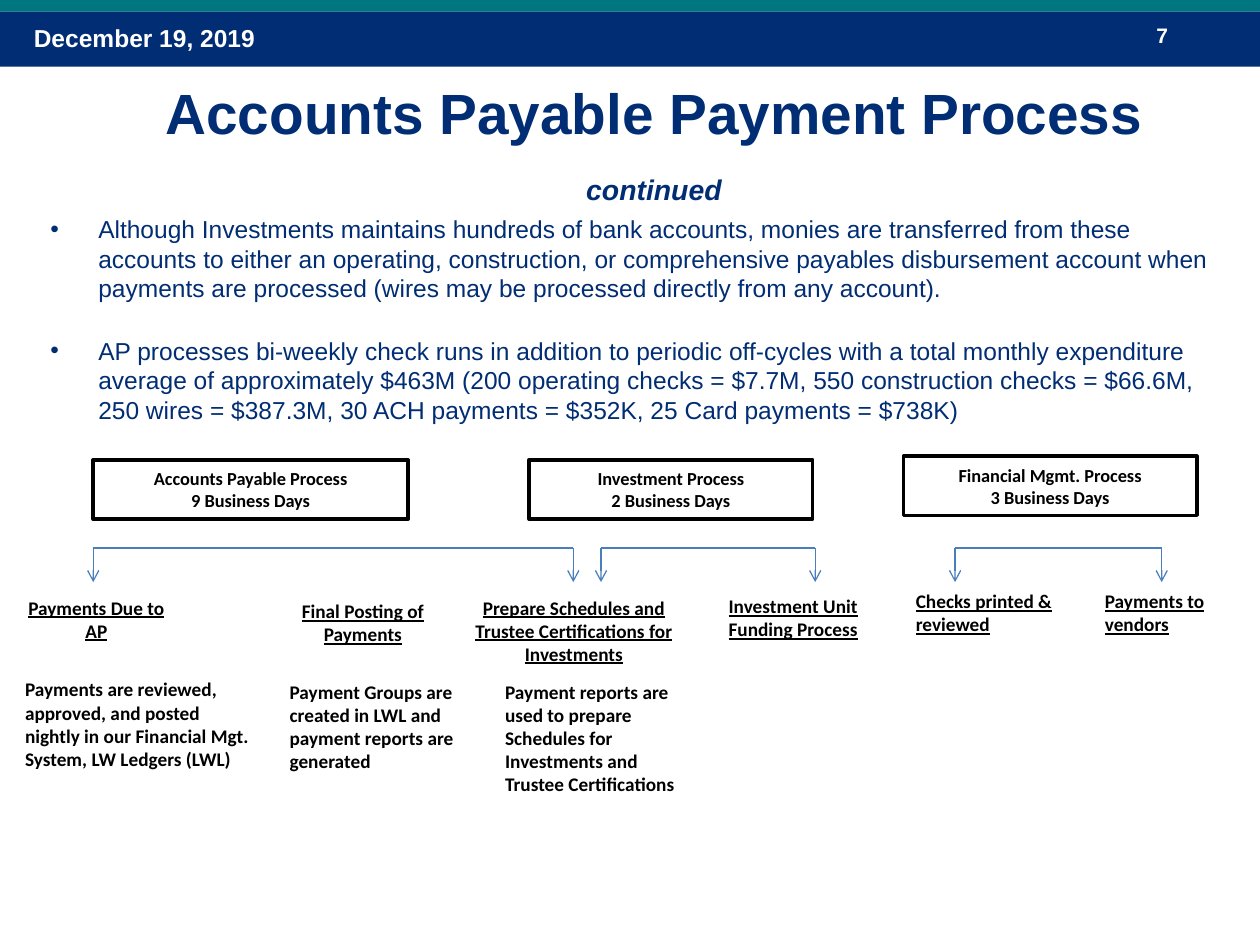
from lxml import etree
from pptx import Presentation, util as u
from pptx.dml.color import RGBColor
from pptx.enum import shapes, text
from pptx.oxml.ns import qn

COLS, ROWS = 100, 75
WIDE, HIGH = u.Inches(10), u.Inches(7.5)
NAVY, TEAL, BLUE = "002D73", "007681", "4B7EBC"
WHITE, BLACK = "FFFFFF", "000000"
MID, LEFT = text.PP_ALIGN.CENTER, text.PP_ALIGN.LEFT

BOXES = [
    (7.4, 36.5, 25, "Accounts Payable Process", "9 Business Days"),
    (42, 36.5, 22.5, "Investment Process", "2 Business Days"),
    (71.7, 36.2, 23.3, "Financial Mgmt. Process", "3 Business Days"),
]
SPANS = [(7.4, 45.5), (47.7, 64.7), (75.8, 92.2)]
STEPS = [
    (1, 46.8, 13.3, 4.7, MID, "Payments Due to AP"),
    (21.7, 47.1, 14.2, 4.7, MID, "Final Posting of Payments"),
    (35.6, 46.8, 19.9, 6.6, MID,
     "Prepare Schedules and Trustee Certifications for Investments"),
    (54.2, 46.7, 17.5, 4.7, MID, "Investment Unit Funding Process"),
    (71.7, 46.3, 15.6, 4.7, LEFT, "Checks printed & reviewed"),
    (86.7, 46.3, 10.8, 4.7, LEFT, "Payments to vendors"),
]
NOTES = [
    (1, 53.3, 19.9, 8.4, "Payments are reviewed, approved, and posted nightly "
     "in our Financial Mgt. System, LW Ledgers (LWL)"),
    (22, 53.5, 17.1, 8.4, "Payment Groups are created in LWL and payment "
     "reports are generated"),
    (39.1, 53.5, 17.1, 10.3, "Payment reports are used to prepare Schedules "
     "for Investments and Trustee Certifications"),
]
POINTS = [
    "Although Investments maintains hundreds of bank accounts, monies are "
    "transferred from these accounts to either an operating, construction, or "
    "comprehensive payables disbursement account when payments are processed "
    "(wires may be processed directly from any account).",
    "AP processes bi-weekly check runs in addition to periodic off-cycles with "
    "a total monthly expenditure average of approximately $463M (200 operating "
    "checks = $7.7M, 550 construction checks = $66.6M, \v250 wires = $387.3M, "
    "30 ACH payments = $352K, 25 Card payments = $738K)",
]


def tint(code):
    return RGBColor.from_string(code)


def grid(col, row):
    return int(WIDE * col / COLS), int(HIGH * row / ROWS)


def area(col, row, wide, high):
    return *grid(col, row), *grid(wide, high)


def move(shape, *cells):
    shape.left, shape.top, shape.width, shape.height = area(*cells)


def write(frame, words, size=11, face="Calibri", color=BLACK, bold=True,
          italic=False, under=False, align=LEFT, gap=0, mark=None, more=False):
    para = frame.add_paragraph() if more else frame.paragraphs[0]
    para.text = words
    para.alignment = align
    para.space_before = u.Pt(gap)
    if mark:
        props = para._p.get_or_add_pPr()
        indent = u.Inches(0.38)
        props.set("marL", str(indent))
        props.set("indent", str(-indent))
        etree.SubElement(props, qn("a:buChar")).set("char", mark)
    for run in para.runs:
        font = run.font
        font.name, font.size = face, u.Pt(size)
        font.bold, font.italic, font.underline = bold, italic, under
        font.color.rgb = tint(color)


def label(slide, cells, words, **form):
    frame = slide.shapes.add_textbox(*area(*cells)).text_frame
    frame.word_wrap = True
    write(frame, words, **form)


def block(slide, cells, fill, edge=None):
    shape = slide.shapes.add_shape(shapes.MSO_SHAPE.RECTANGLE, *area(*cells))
    shape.shadow.inherit = False
    shape.fill.solid()
    shape.fill.fore_color.rgb = tint(fill)
    if edge:
        shape.line.color.rgb = tint(edge)
        shape.line.width = u.Pt(2)
    else:
        shape.line.fill.background()
    return shape.text_frame


def line(slide, start, end, arrow=False):
    link = slide.shapes.add_connector(
        shapes.MSO_CONNECTOR.STRAIGHT, *grid(*start), *grid(*end))
    link.line.color.rgb = tint(BLUE)
    link.line.width = u.Pt(0.75)
    if arrow:
        etree.SubElement(link.line._get_or_add_ln(),
                         qn("a:tailEnd")).set("type", "arrow")
    etree.SubElement(link._element.spPr, qn("a:effectLst"))


def span(slide, left, right, top=43.5, foot=46.2):
    line(slide, (left, top), (right, top))
    for col in (left, right):
        line(slide, (col, top), (col, foot), arrow=True)


def header(slide):
    block(slide, (0, 0.9, COLS, 4.4), NAVY)
    block(slide, (0, 0, COLS, 0.9), TEAL)
    form = dict(face="Arial", color=WHITE)
    label(slide, (1.7, 1.3, 23.3, 4), "December 19, 2019", size=14, **form)
    label(slide, (90.8, 1.3, 7.5, 4), "7", size=12, **form)


def title(slide):
    shape = slide.shapes.title
    move(shape, 6.9, 9.3, 90, 7.9)
    frame = shape.text_frame
    frame.auto_size = text.MSO_AUTO_SIZE.NONE
    frame.vertical_anchor = text.MSO_ANCHOR.MIDDLE
    frame.margin_bottom = u.Inches(0.45)
    form = dict(face="Arial", color=NAVY, align=MID)
    write(frame, "Accounts Payable Payment Process", size=32.4, **form)
    write(frame, "continued", size=16.2, italic=True, gap=14.8, more=True,
          **form)


def body(slide):
    shape = slide.placeholders[1]
    move(shape, 3, 16.5, 95.4, 52.5)
    frame = shape.text_frame
    frame.auto_size = text.MSO_AUTO_SIZE.NONE
    for rank, words in enumerate(POINTS):
        write(frame, words, size=14, face="Arial", color=NAVY, bold=False,
              gap=19 * rank, mark="•", more=rank > 0)


def main():
    deck = Presentation()
    deck.slide_width, deck.slide_height = WIDE, HIGH
    slide = deck.slides.add_slide(deck.slide_layouts[1])
    header(slide)
    title(slide)
    body(slide)
    for col, row, wide, name, days in BOXES:
        frame = block(slide, (col, row, wide, 4.7), WHITE, BLACK)
        write(frame, name, size=10.5, align=MID)
        write(frame, days, size=10.5, align=MID, more=True)
    for ends in SPANS:
        span(slide, *ends)
    for *cells, align, words in STEPS:
        label(slide, cells, words, under=True, align=align)
    for *cells, words in NOTES:
        label(slide, cells, words)
    deck.save("out.pptx")


if __name__ == "__main__":
    main()
